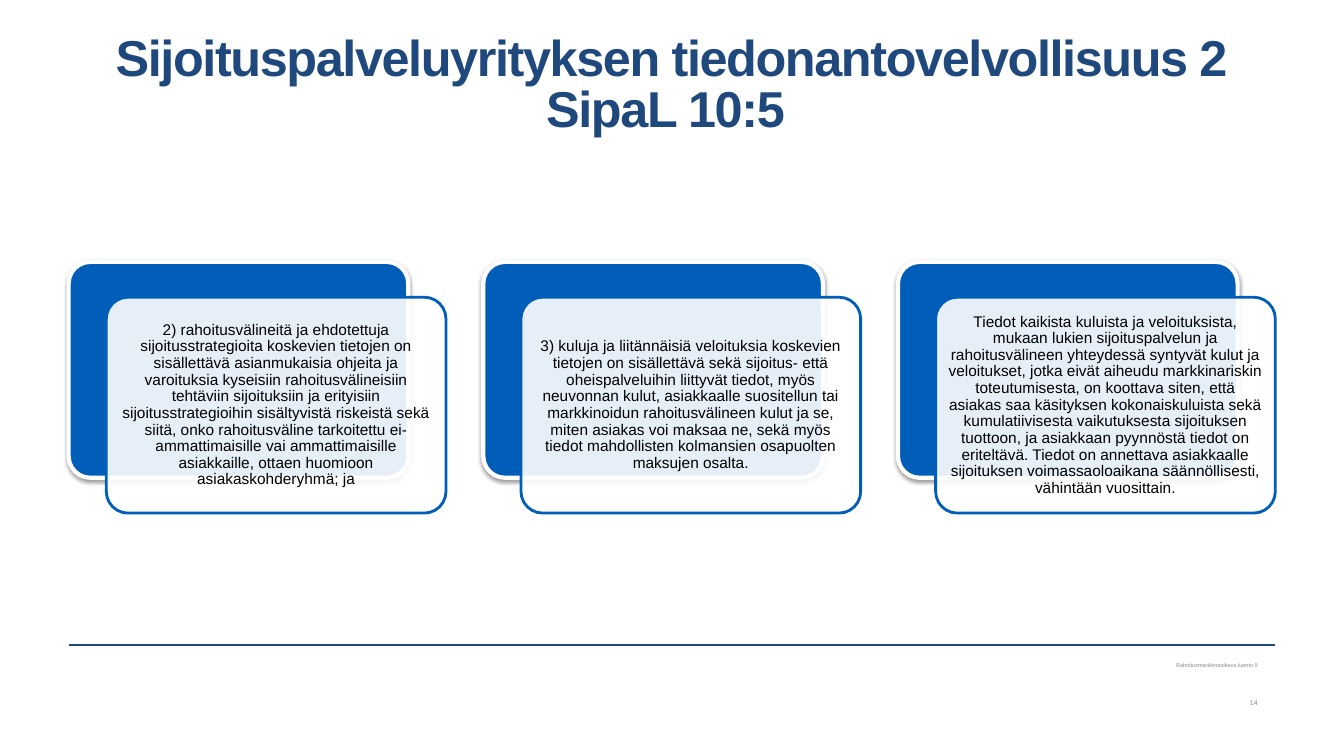
from lxml import etree
from pptx import Presentation
from pptx.dml.color import RGBColor
from pptx.enum import shapes, text
from pptx.oxml import ns
from pptx.util import Cm, Pt

NAVY = RGBColor(0x1F, 0x49, 0x7D)
BLUE = RGBColor(0x00, 0x5E, 0xB8)
WHITE = RGBColor(0xFF, 0xFF, 0xFF)
BLACK = RGBColor(0x00, 0x00, 0x00)
GREY = RGBColor(0x8C, 0x8C, 0x8C)

LEFT, RIGHT = 1.73, 32.13
WIDE, HIGH = 8.56, 5.44
STEP = 10.45

DUTIES = [
    "2) rahoitusvälineitä ja ehdotettuja sijoitusstrategioita koskevien "
    "tietojen on sisällettävä asianmukaisia ohjeita ja varoituksia kyseisiin "
    "rahoitusvälineisiin tehtäviin sijoituksiin ja erityisiin "
    "sijoitusstrategioihin sisältyvistä riskeistä sekä siitä, onko "
    "rahoitusväline tarkoitettu ei-ammattimaisille vai ammattimaisille "
    "asiakkaille, ottaen huomioon asiakaskohderyhmä; ja",
    "3) kuluja ja liitännäisiä veloituksia koskevien tietojen on "
    "sisällettävä sekä sijoitus- että oheispalveluihin liittyvät tiedot, myös "
    "neuvonnan kulut, asiakkaalle suositellun tai markkinoidun "
    "rahoitusvälineen kulut ja se, miten asiakas voi maksaa ne, sekä myös "
    "tiedot mahdollisten kolmansien osapuolten maksujen osalta.",
    "Tiedot kaikista kuluista ja veloituksista, mukaan lukien "
    "sijoituspalvelun ja rahoitusvälineen yhteydessä syntyvät kulut ja "
    "veloitukset, jotka eivät aiheudu markkinariskin toteutumisesta, on "
    "koottava siten, että asiakas saa käsityksen kokonaiskuluista sekä "
    "kumulatiivisesta vaikutuksesta sijoituksen tuottoon, ja asiakkaan "
    "pyynnöstä tiedot on eriteltävä. Tiedot on annettava asiakkaalle "
    "sijoituksen voimassaoloaikana säännöllisesti, vähintään vuosittain.",
]


def add(parent, tag, **attrs):
    return etree.SubElement(parent, ns.qn(tag), attrs)


def write(frame, words, size, color, align, space, pads, anchor):
    """Fill a text frame and format its runs."""
    frame.text = words
    frame.word_wrap = True
    frame.auto_size = text.MSO_AUTO_SIZE.NONE
    frame.vertical_anchor = anchor
    (frame.margin_left, frame.margin_top,
     frame.margin_right, frame.margin_bottom) = [Cm(pad) for pad in pads]
    para = frame.paragraphs[0]
    para.alignment = align
    para.line_spacing = space
    for run in para.runs:
        run.font.name = "Arial"
        run.font.size = Pt(size)
        run.font.color.rgb = color
    return para


def head(slide):
    title = slide.shapes.title
    title.left, title.top = Cm(LEFT), Cm(0.89)
    title.width, title.height = Cm(RIGHT - LEFT), Cm(3.33)
    para = write(title.text_frame,
                 "Sijoituspalveluyrityksen tiedonantovelvollisuus 2\vSipaL 10:5 ",
                 36, NAVY, text.PP_ALIGN.CENTER, 0.85, [0] * 4,
                 text.MSO_ANCHOR.TOP)
    for run in para.runs:
        run.font.bold = True
        run.font._element.set("spc", "-100")
    for gap in para._p.findall(ns.qn("a:br")):
        add(gap, "a:rPr", sz="3600")


def box(group, left, top, fill, line, width):
    shape = group.shapes.add_shape(shapes.MSO_SHAPE.ROUNDED_RECTANGLE,
                                   Cm(left), Cm(top), Cm(WIDE), Cm(HIGH))
    shape.adjustments[0] = 0.1
    shape.fill.solid()
    shape.fill.fore_color.rgb = fill
    shape.line.color.rgb = line
    shape.line.width = Pt(width)
    shape.shadow.inherit = False
    return shape


def card(slide, left, words):
    """A blue panel with a translucent text panel in front."""
    group = slide.shapes.add_group_shape()

    # Back panel and its shadow
    back = box(group, left, 6.6, BLUE, WHITE, 3)
    glow = back._element.spPr.find(ns.qn("a:effectLst"))
    shade = add(glow, "a:outerShdw", blurRad=str(Pt(3.1)), dist=str(Pt(1.6)),
                dir="5400000", rotWithShape="0")
    tint = add(shade, "a:srgbClr", val=str(BLACK))
    add(tint, "a:alpha", val="38000")

    # Front panel with text
    front = box(group, left + 0.95, 7.49, WHITE, BLUE, 2)
    tint = front._element.spPr.find(ns.qn("a:solidFill"))[0]
    add(tint, "a:alpha", val="90000")
    write(front.text_frame, words, 11, BLACK, text.PP_ALIGN.CENTER, 0.9,
          [0.13] * 4, text.MSO_ANCHOR.MIDDLE)


def rule(slide, top):
    line = slide.shapes.add_connector(shapes.MSO_CONNECTOR.STRAIGHT,
                                      Cm(LEFT), Cm(top), Cm(RIGHT), Cm(top))
    line.line.color.rgb = NAVY
    line.line.width = Pt(1)
    add(line._element.spPr, "a:effectLst")


def note(slide, top, words, size):
    area = slide.shapes.add_textbox(Cm(18.29), Cm(top), Cm(13.41), Cm(0.45))
    para = write(area.text_frame, words, size, GREY, text.PP_ALIGN.RIGHT, 0.9,
                 [0.25, 0.13, 0, 0.13], text.MSO_ANCHOR.MIDDLE)
    para.space_after = Pt(6)


def main():
    deck = Presentation()
    deck.slide_width, deck.slide_height = Cm(33.87), Cm(19.05)
    slide = deck.slides.add_slide(deck.slide_layouts[5])

    # Title
    head(slide)

    # Cards
    for i, words in enumerate(DUTIES):
        card(slide, LEFT + i * STEP, words)

    # Footer
    rule(slide, 16.25)
    note(slide, 16.54, "Rahoitusmarkkinaoikeus luento 9", 4)
    note(slide, 17.5, "14", 5)

    deck.save("out.pptx")


if __name__ == "__main__":
    main()
